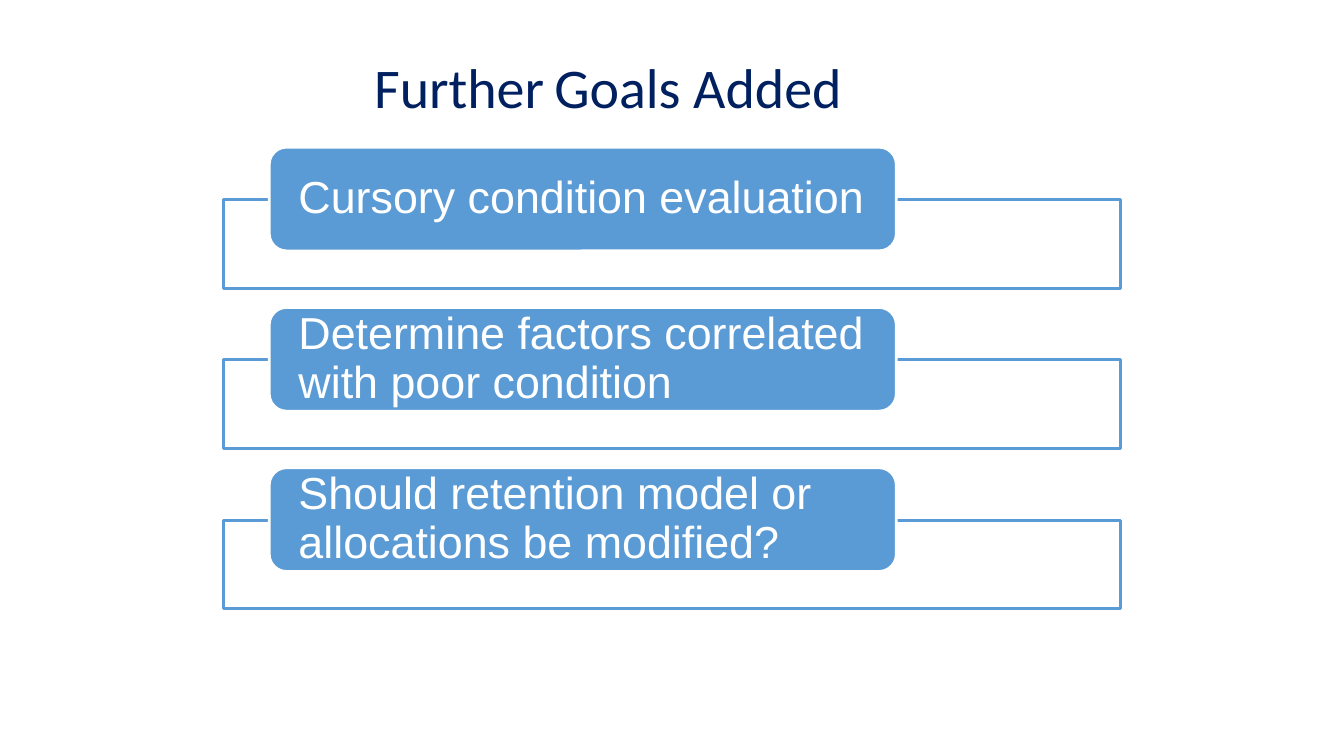
"""Build the slide of further goals: a title and three framed labels."""
from pptx import Presentation
from pptx.dml.color import RGBColor
from pptx.enum.shapes import MSO_SHAPE
from pptx.enum.text import MSO_ANCHOR, MSO_AUTO_SIZE, PP_ALIGN
from pptx.util import Inches, Pt

RECT, ROUND = MSO_SHAPE.RECTANGLE, MSO_SHAPE.ROUNDED_RECTANGLE
MIDDLE, LEFT, FIXED = MSO_ANCHOR.MIDDLE, PP_ALIGN.LEFT, MSO_AUTO_SIZE.NONE
NAVY = RGBColor(0x00, 0x20, 0x60)
BLUE = RGBColor(0x5B, 0x9B, 0xD5)
WHITE = RGBColor(0xFF, 0xFF, 0xFF)
GOALS = [
    "Cursory condition evaluation",
    "Determine factors correlated with poor condition",
    "Should retention model or allocations be modified?",
]
TOP, STEP = 1.46, 1.59

deck = Presentation()
deck.slide_width, deck.slide_height = Inches(13.33), Inches(7.5)
slide = deck.slides.add_slide(deck.slide_layouts[5])


def add_box(kind, left, top, width, height, fill, line):
    box = slide.shapes.add_shape(
        kind, Inches(left), Inches(top), Inches(width), Inches(height))
    box.shadow.inherit = False
    box.fill.solid()
    box.fill.fore_color.rgb = fill
    box.line.color.rgb = line
    box.line.width = Pt(2)
    return box


title = slide.shapes.title
title.left, title.top = Inches(3.61), Inches(0.47)
title.width, title.height = Inches(5.16), Inches(0.77)
title.text_frame.auto_size = FIXED
title.text_frame.vertical_anchor = MIDDLE
head = title.text_frame.paragraphs[0]
head.alignment = LEFT
head.font.name = "Calibri"
head.font.color.rgb = NAVY
for words, size in [("Further", 40), (" ", 32), ("Goals Added", 40)]:
    run = head.add_run()
    run.text = words
    run.font.size = Pt(size)

for row, goal in enumerate(GOALS):
    top = TOP + row * STEP
    add_box(RECT, 2.22, top + 0.52, 8.89, 0.88, WHITE, BLUE)
    label = add_box(ROUND, 2.67, top, 6.22, 1.03, BLUE, WHITE)
    frame = label.text_frame
    frame.word_wrap = True
    frame.vertical_anchor = MIDDLE
    frame.margin_left = frame.margin_right = Inches(0.24)
    frame.margin_top = frame.margin_bottom = Inches(0)
    frame.text = goal
    para = frame.paragraphs[0]
    para.alignment = LEFT
    para.line_spacing = 0.9
    para.font.name = "Arial"
    para.font.size = Pt(32)
    para.font.color.rgb = WHITE

deck.save("out.pptx")
